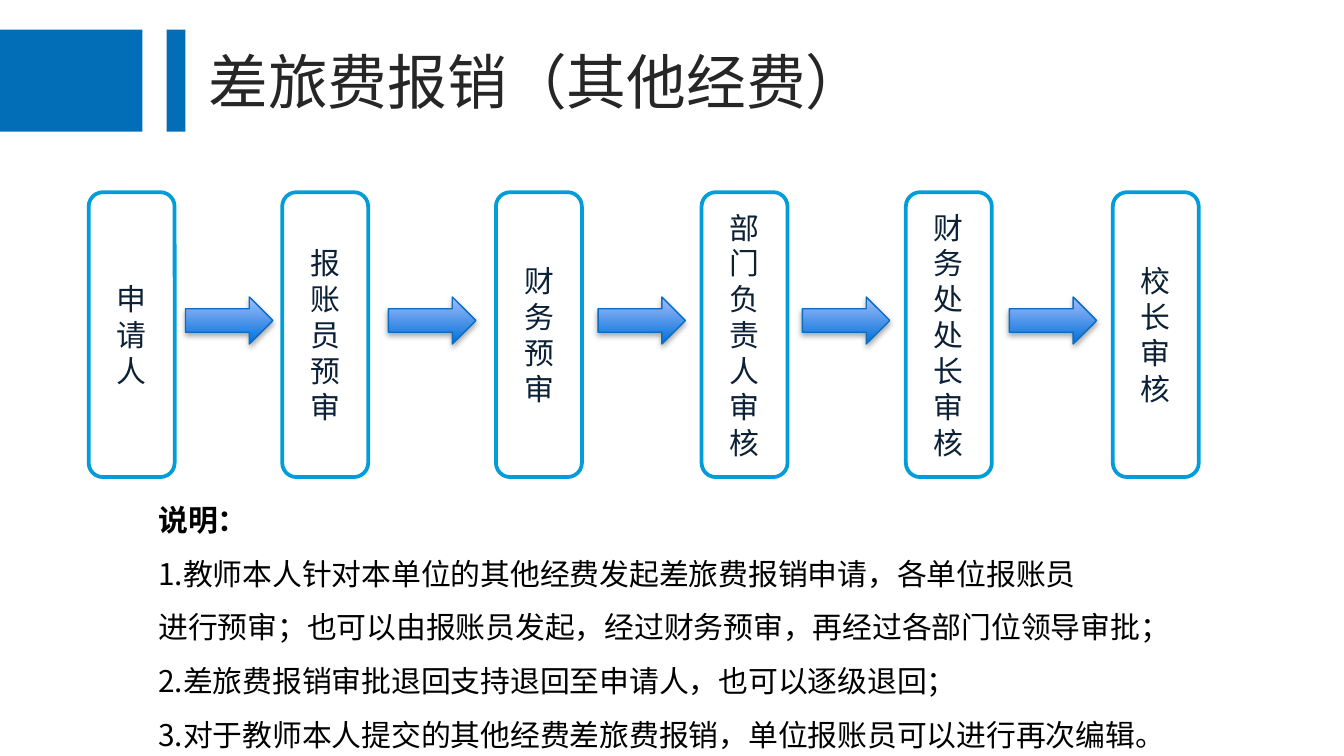
from lxml import etree
from pptx import Presentation
from pptx.dml.color import RGBColor
from pptx.enum.shapes import MSO_SHAPE
from pptx.enum.text import MSO_ANCHOR, MSO_AUTO_SIZE, PP_ALIGN
from pptx.oxml import parse_xml
from pptx.oxml.ns import nsdecls, qn
from pptx.util import Inches, Pt

COLORS = {
    "brand": "036EB8", "title": "262626", "body": "000000",
    "step_fill": "FFFFFF", "step_line": "009DD9", "step_text": "0C2036",
    "arrow_dark": "0070D5", "arrow_light": "A3BDFF", "arrow_line": "0A6DC6",
}
BODY_FONT = "Noto Sans CJK SC"
STEP_FONT = "League Spartan"
STEPS = [
    (0.66, "申请人"), (2.1, "报账员预审"), (3.69, "财务预审"),
    (5.22, "部门负责人审核"), (6.74, "财务处处长审核"), (8.28, "校长审核"),
]
ARROW_LEFTS = [1.38, 2.89, 4.45, 5.97, 7.51]
NOTES = [
    "说明：",
    "1.教师本人针对本单位的其他经费发起差旅费报销申请，各单位报账员",
    "进行预审；也可以由报账员发起，经过财务预审，再经过各部门位领导审批；",
    "2.差旅费报销审批退回支持退回至申请人，也可以逐级退回；",
    "3.对于教师本人提交的其他经费差旅费报销，单位报账员可以进行再次编辑。",
]


def color(name):
    return RGBColor.from_string(COLORS[name])


def write(para, text, size=16, font=BODY_FONT, ink="body", bold=False,
          align=PP_ALIGN.LEFT, spacing=None):
    para.alignment = align
    para.line_spacing = spacing
    span = para.add_run()
    span.text = text
    span.font.size = Pt(size)
    span.font.bold = bold
    span.font.color.rgb = color(ink)
    span.font.name = font
    latin = span.font._element.find(qn("a:latin"))
    east_asian = etree.Element(qn("a:ea"), typeface=font)
    latin.addnext(east_asian)


def add_box(page, kind, left, top, width, height, fill=None, line=None, weight=1):
    box = page.shapes.add_shape(kind, Inches(left), Inches(top), Inches(width), Inches(height))
    box.shadow.inherit = False
    if fill:
        box.fill.solid()
        box.fill.fore_color.rgb = color(fill)
    if line:
        box.line.color.rgb = color(line)
        box.line.width = Pt(weight)
    else:
        box.line.fill.background()
    return box


def add_header(page, top, height):
    for left, width in [(0, 1.06), (1.24, 0.14)]:
        add_box(page, MSO_SHAPE.RECTANGLE, left, top, width, height, fill="brand")
    title = page.shapes.title
    title.left, title.top = Inches(1.45), Inches(top + 0.06)
    title.width, title.height = Inches(5.19), Inches(height - 0.12)
    frame = title.text_frame
    frame.auto_size = MSO_AUTO_SIZE.NONE
    frame.vertical_anchor = MSO_ANCHOR.TOP
    write(frame.paragraphs[0], "差旅费报销（其他经费）", size=32, ink="title")


def add_step(page, text, left, top, width, height):
    box = add_box(page, MSO_SHAPE.ROUNDED_RECTANGLE, left, top, width, height,
                  fill="step_fill", line="step_line", weight=2)
    frame = box.text_frame
    frame.word_wrap = True
    frame.vertical_anchor = MSO_ANCHOR.MIDDLE
    write(frame.paragraphs[0], text, font=STEP_FONT, ink="step_text", align=PP_ALIGN.CENTER)


def add_arrow(page, left, top, width, height):
    arrow = add_box(page, MSO_SHAPE.RIGHT_ARROW, left, top, width, height,
                    line="arrow_line", weight=0.75)
    arrow.fill.gradient()
    arrow.fill.gradient_angle = 90
    for stop, name in zip(arrow.fill.gradient_stops, ["arrow_dark", "arrow_light"]):
        stop.color.rgb = color(name)
    effects = arrow._element.spPr.find(qn("a:effectLst"))
    effects.append(parse_xml(
        f'<a:outerShdw {nsdecls("a")} blurRad="{Pt(3.1)}" dist="{Pt(1.8)}" dir="5400000" '
        'rotWithShape="0"><a:srgbClr val="000000"><a:alpha val="35000"/></a:srgbClr>'
        '</a:outerShdw>'))


def add_flow(page, top, height):
    for left, text in STEPS:
        add_step(page, text, left, top, 0.64, height)
    for left in ARROW_LEFTS:
        add_arrow(page, left, top + 0.78, 0.65, 0.35)


def add_notes(page, left, top, width, height):
    box = page.shapes.add_textbox(Inches(left), Inches(top), Inches(width), Inches(height))
    frame = box.text_frame
    frame.word_wrap = True
    for index, text in enumerate(NOTES):
        para = frame.add_paragraph() if index else frame.paragraphs[0]
        write(para, text, bold=index == 0, spacing=1.5)


def main():
    deck = Presentation()
    deck.slide_width = Inches(10)
    deck.slide_height = deck.slide_width * 9 // 16
    page = deck.slides.add_slide(deck.slide_layouts[5])
    add_header(page, 0.22, 0.76)
    add_flow(page, 1.43, 2.12)
    add_notes(page, 1.08, 3.55, 8.56, 2.12)
    deck.save("out.pptx")


if __name__ == "__main__":
    main()
